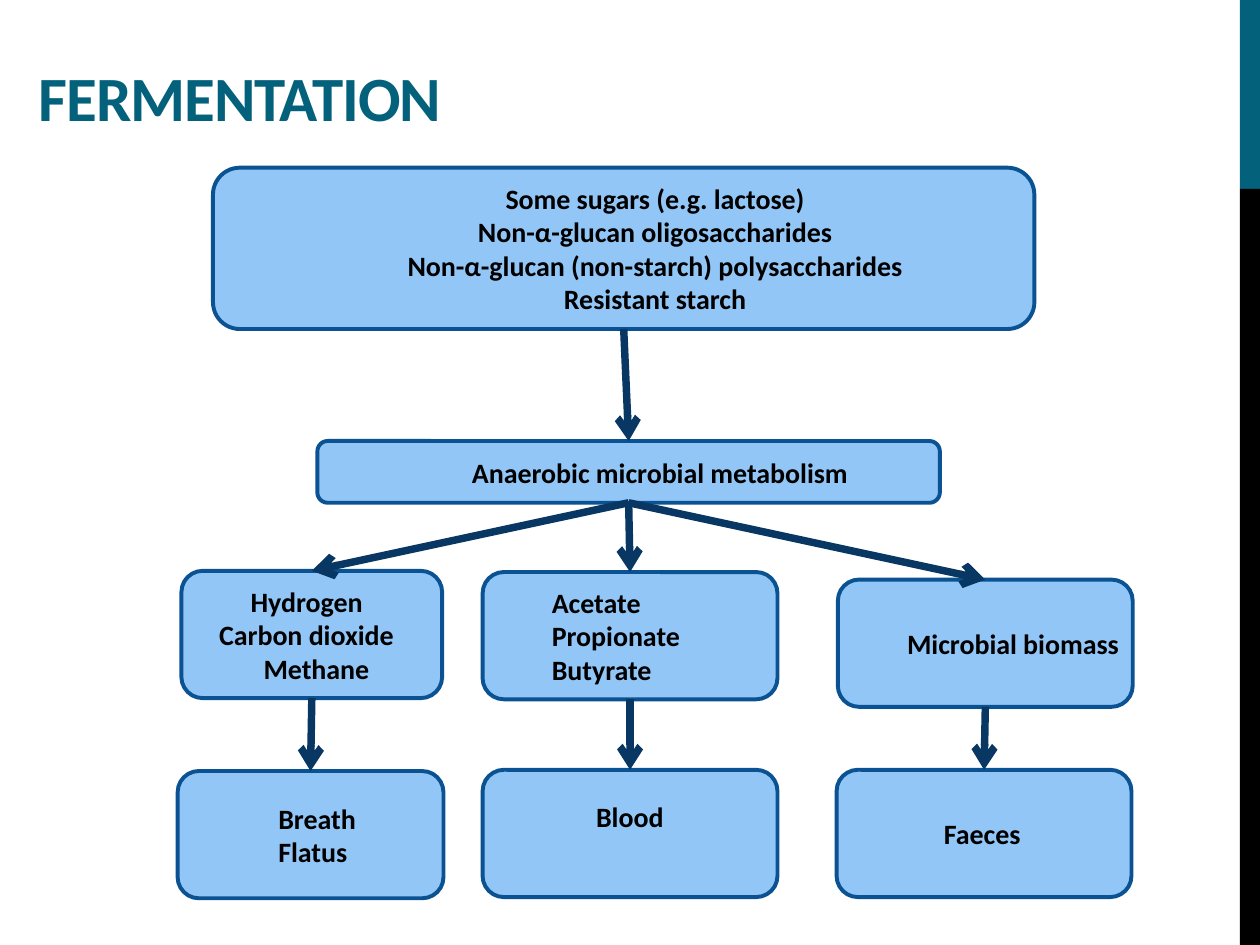
from pptx import Presentation
from pptx.dml.color import RGBColor as Rgb
from pptx.enum.shapes import MSO_CONNECTOR as Link, MSO_SHAPE as Shape
from pptx.enum.text import MSO_ANCHOR as Anchor, PP_ALIGN as Align
from pptx.oxml.ns import qn
from pptx.util import Pt
from lxml.etree import SubElement

THEME = {
    "font": "Calibri", "title": 36, "body": 16,
    "teal": "04617B", "black": "000000", "fill": "91C6F7",
    "edge": "0B5292", "arrow": "083763", "edge_w": 2.25, "arrow_w": 4.25,
}
WIDE, HIGH = 720, 540
BAR_X, BAR_CUT = 708.5, 108
ROW_H, STEP = 72.7, 36
TITLE = "FERMENTATION"

# name: (left, top, width, height), alignment, bottom inset, [(text, indent)]
BOXES = {
    "sources": ((121.7, 95.8, 469.4, 92.2), Align.CENTER, 0, [
        ("Some sugars (e.g. lactose)", STEP),
        ("Non-α-glucan oligosaccharides", STEP),
        ("Non-α-glucan (non-starch) polysaccharides", STEP),
        ("Resistant starch", STEP)]),
    "process": ((181.4, 252, 355.7, 35.3), Align.CENTER, 0, [
        ("Anaerobic microbial metabolism", STEP)]),
    "acids": ((275.8, 326.9, 168.5, ROW_H), Align.LEFT, 0, [
        ("Acetate", STEP), ("Propionate", STEP), ("Butyrate", STEP)]),
    "gases": ((103.7, 326.2, 149, ROW_H), Align.LEFT, 0, [
        ("Hydrogen", 36), ("Carbon dioxide", 18), ("Methane", 43.4)]),
    "biomass": ((478.8, 331.2, 168.5, ROW_H), Align.LEFT, 0, [
        ("Microbial biomass", STEP)]),
    "faeces": ((478.1, 439.9, 168.5, ROW_H), Align.LEFT, 0, [
        ("Faeces", 57.7)]),
    "blood": ((275.8, 439.9, 168.5, ROW_H), Align.LEFT, 19.5, [
        ("Blood", 61.3)]),
    "breath": ((101.5, 440.6, 151.9, ROW_H), Align.LEFT, 0, [
        ("Breath", 54), ("Flatus", 54)]),
}
FLOWS = [
    ("sources", "process"), ("process", "gases"), ("process", "acids"),
    ("process", "biomass"), ("acids", "blood"), ("biomass", "faeces"),
    ("gases", "breath"),
]
TOP, BOTTOM = 0, 2  # connection sites of a box


def color(key):
    return Rgb.from_string(THEME[key])


def add_run(para, text, size, ink):
    run = para.add_run()
    run.text = text
    font = run.font
    font.name, font.size, font.bold = THEME["font"], Pt(THEME[size]), True
    font.color.rgb = color(ink)
    return run


def add_shape(slide, kind, rect, fill, edge=None):
    shape = slide.shapes.add_shape(kind, *map(Pt, rect))
    shape.shadow.inherit = False
    shape.fill.solid()
    shape.fill.fore_color.rgb = color(fill)
    if edge:
        shape.line.color.rgb = color(edge)
        shape.line.width = Pt(THEME["edge_w"])
    else:
        shape.line.fill.background()
    return shape


def add_title(slide):
    box = slide.shapes.add_textbox(Pt(15), Pt(-10), Pt(648), Pt(90))
    frame = box.text_frame
    frame.word_wrap, frame.vertical_anchor = True, Anchor.BOTTOM
    run = add_run(frame.paragraphs[0], TITLE, "title", "teal")
    run.font._element.set("spc", "-60")


def add_box(slide, rect, align, inset, lines):
    box = add_shape(slide, Shape.ROUNDED_RECTANGLE, rect, "fill", "edge")
    frame = box.text_frame
    frame.word_wrap, frame.vertical_anchor = True, Anchor.MIDDLE
    frame.margin_left = frame.margin_right = frame.margin_top = 0
    frame.margin_bottom = Pt(inset)
    for i, (text, indent) in enumerate(lines):
        para = frame.add_paragraph() if i else frame.paragraphs[0]
        para.alignment = align
        props = para._p.get_or_add_pPr()
        props.set("marL", str(Pt(indent)))
        props.set("indent", "0")
        add_run(para, text, "body", "black")
    return box


def add_arrow(slide, start, end):
    line = slide.shapes.add_connector(Link.STRAIGHT, 0, 0, 0, 0)
    line.begin_connect(start, BOTTOM)
    line.end_connect(end, TOP)
    line.line.color.rgb = color("arrow")
    line.line.width = Pt(THEME["arrow_w"])
    SubElement(line.line._get_or_add_ln(), qn("a:tailEnd"), type="arrow")
    SubElement(line._element.spPr, qn("a:effectLst"))


def main():
    deck = Presentation()
    deck.slide_width, deck.slide_height = Pt(WIDE), Pt(HIGH)
    slide = deck.slides.add_slide(deck.slide_layouts[6])
    for top, end, fill in ((0, BAR_CUT, "teal"), (BAR_CUT, HIGH, "black")):
        rect = (BAR_X, top, WIDE - BAR_X, end - top)
        add_shape(slide, Shape.RECTANGLE, rect, fill)
    add_title(slide)
    boxes = {name: add_box(slide, *data) for name, data in BOXES.items()}
    for start, end in FLOWS:
        add_arrow(slide, boxes[start], boxes[end])
    deck.save("out.pptx")


if __name__ == "__main__":
    main()
